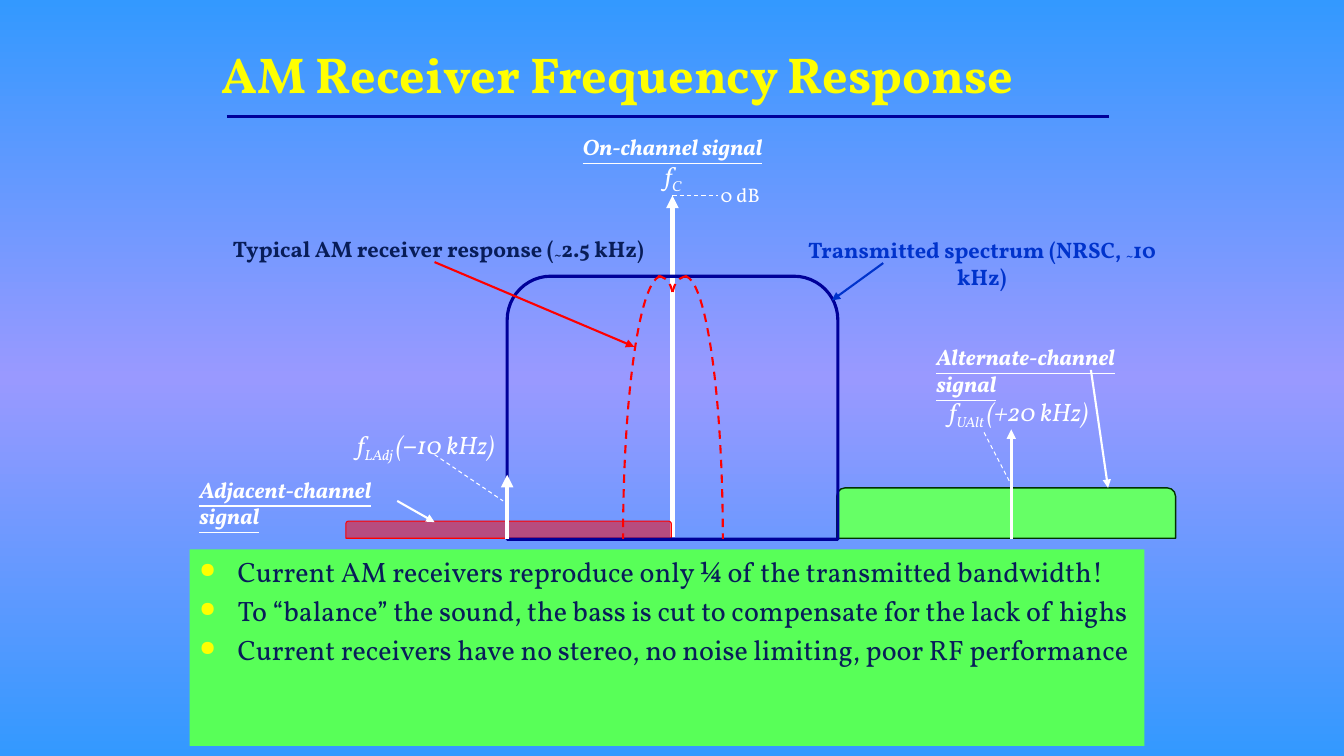
from copy import deepcopy
from dataclasses import dataclass

from lxml import etree
from pptx import Presentation
from pptx.dml.color import RGBColor
from pptx.enum.dml import MSO_LINE
from pptx.enum.shapes import MSO_CONNECTOR, MSO_SHAPE
from pptx.enum.text import MSO_ANCHOR, MSO_AUTO_SIZE, PP_ALIGN
from pptx.oxml.ns import qn
from pptx.util import Inches, Pt


@dataclass(frozen=True)
class Theme:
    """Colours, font and type sizes of the slide."""
    font: str = "Vollkorn"
    sky: str = "3399FF"
    lilac: str = "9999FF"
    yellow: str = "FFFF00"
    navy: str = "000099"
    ink: str = "081D58"
    blue: str = "0033CC"
    white: str = "FFFFFF"
    red: str = "FF0000"
    panel: str = "58FF58"
    green: str = "66FF66"
    forest: str = "003300"
    title: int = 36
    body: int = 20
    symbol: int = 18
    label: int = 16
    small: int = 14


THEME = Theme()


@dataclass(frozen=True)
class Box:
    """A rectangle in inches."""
    left: float
    top: float
    width: float
    height: float

    def region(self, left, top, width, height):
        """Return a box offset from this one's corner."""
        return Box(self.left + left, self.top + top, width, height)

    def point(self, left, top):
        """Return a point offset from this box's corner."""
        return self.left + left, self.top + top

    def lengths(self):
        """Return the four lengths for python-pptx."""
        return [Inches(n) for n in (self.left, self.top, self.width, self.height)]


@dataclass(frozen=True)
class Neighbour:
    """A neighbouring channel: its bar, and offsets from the bar's corner."""
    bar: Box
    fill: str
    edge: str
    edge_width: float
    opacity: int
    name: str
    name_at: tuple
    symbol: list
    symbol_at: tuple
    carrier: tuple
    carrier_width: float
    pointer: tuple
    leader: tuple


def rgb(colour):
    """Turn a hex code into a colour."""
    return RGBColor.from_string(colour)


def set_font(font, size, colour, bold=False, italic=False, underline=False):
    """Format a font in the theme's typeface."""
    font.name, font.size, font.color.rgb = THEME.font, Pt(size), rgb(colour)
    font.bold, font.italic, font.underline = bold, italic, underline


def add_shape(page, kind, box, fill=None, edge=None, width=1, dashed=False):
    """Add a preset shape without a shadow."""
    shape = page.shapes.add_shape(kind, *box.lengths())
    shape.shadow.inherit = False
    if fill:
        shape.fill.solid()
        shape.fill.fore_color.rgb = rgb(fill)
    else:
        shape.fill.background()
    if edge:
        shape.line.color.rgb, shape.line.width = rgb(edge), Pt(width)
        if dashed:
            shape.line.dash_style = MSO_LINE.DASH
    else:
        shape.line.fill.background()
    return shape


def add_line(page, start, end, colour, width, arrow=False, dashed=False):
    """Draw a straight line, with an arrowhead at its end if asked."""
    ends = [Inches(n) for n in (*start, *end)]
    line = page.shapes.add_connector(MSO_CONNECTOR.STRAIGHT, *ends)
    line.line.color.rgb, line.line.width = rgb(colour), Pt(width)
    if dashed:
        line.line.dash_style = MSO_LINE.DASH
    if arrow:
        etree.SubElement(line.line._get_or_add_ln(), qn("a:tailEnd"), type="triangle")
    etree.SubElement(line._element.spPr, qn("a:effectLst"))


def add_label(page, box, spans, size, colour, align=PP_ALIGN.LEFT, **style):
    """Add a text box from (text, baseline percent) spans."""
    frame = page.shapes.add_textbox(*box.lengths()).text_frame
    frame.word_wrap = True
    frame.auto_size = MSO_AUTO_SIZE.SHAPE_TO_FIT_TEXT
    para = frame.paragraphs[0]
    para.alignment = align
    for text, baseline in spans:
        span = para.add_run()
        span.text = text
        set_font(span.font, size, colour, **style)
        if text == "−":
            span.font.bold = True
        if baseline:
            span.font._element.set("baseline", str(baseline * 1000))


def add_symbol(page, box, spans):
    """Add a centred frequency symbol."""
    add_label(page, box, spans, THEME.symbol, THEME.white, PP_ALIGN.CENTER, italic=True)


def add_name(page, box, text, align=PP_ALIGN.LEFT):
    """Add an underlined signal name."""
    add_label(page, box, [(text, 0)], THEME.label, THEME.white, align,
              bold=True, italic=True, underline=True)


def paint_background(page):
    """Fill the page with a vertical three-stop gradient."""
    fill = page.background.fill
    fill.gradient()
    fill.gradient_angle = 90
    first = fill.gradient_stops[0]._gs
    first.addnext(deepcopy(first))
    stops = zip(fill.gradient_stops, (THEME.sky, THEME.lilac, THEME.sky), (0, 0.5, 1))
    for stop, colour, position in stops:
        stop.color.rgb, stop.position = rgb(colour), position


def draw_title(page, box):
    """Place the title and the rule below it."""
    title = page.shapes.title
    title.left, title.top, title.width, title.height = box.lengths()
    frame = title.text_frame
    frame.text = "AM Receiver Frequency Response"
    frame.vertical_anchor = MSO_ANCHOR.BOTTOM
    para = frame.paragraphs[0]
    para.alignment = PP_ALIGN.CENTER
    set_font(para.runs[0].font, THEME.title, THEME.yellow, bold=True)
    add_line(page, box.point(0.58, 0.86), box.point(9.33, 0.86), THEME.navy, 2.25)


def draw_points(page, box, points):
    """Place the bulleted panel."""
    frame = add_shape(page, MSO_SHAPE.RECTANGLE, box, THEME.panel).text_frame
    frame.word_wrap = True
    frame.vertical_anchor = MSO_ANCHOR.TOP
    frame.text = "\n".join(points)
    for index, para in enumerate(frame.paragraphs):
        para.alignment = PP_ALIGN.LEFT
        para.space_before = Pt(4 if index else 0)
        layout = para._p.get_or_add_pPr()
        layout.set("marL", str(Inches(0.38)))
        layout.set("indent", str(Inches(-0.38)))
        colour = etree.SubElement(layout, qn("a:buClr"))
        etree.SubElement(colour, qn("a:srgbClr"), val=THEME.yellow)
        etree.SubElement(layout, qn("a:buSzPct"), val="75000")
        etree.SubElement(layout, qn("a:buChar"), char="●")
        set_font(para.runs[0].font, THEME.body, THEME.ink)


def draw_carrier(page, box):
    """Draw the on-channel carrier with its level and labels."""
    add_line(page, box.point(0, box.height), box.point(0, 0), THEME.white, 3, arrow=True)
    add_line(page, box.point(0, 0), box.point(0.45, 0), THEME.white, 0.75, dashed=True)
    add_name(page, box.region(-1.26, -0.67, 2.52, 0.37), "On-channel signal", PP_ALIGN.CENTER)
    add_symbol(page, box.region(-0.33, -0.4, 0.67, 0.4), [("f", 0), ("C", -25)])
    add_label(page, box.region(0.38, -0.17, 0.88, 0.34), [("0 dB", 0)], THEME.small, THEME.white)


def draw_bar(page, channel):
    """Draw the spectrum bar of a neighbouring channel."""
    bar = add_shape(page, MSO_SHAPE.ROUND_2_SAME_RECTANGLE, channel.bar,
                    channel.fill, channel.edge, channel.edge_width)
    colour = bar._element.spPr.find(qn("a:solidFill"))[0]
    etree.SubElement(colour, qn("a:alpha"), val=str(channel.opacity * 1000))


def draw_neighbour(page, channel):
    """Draw the carrier, pointers and labels of a neighbouring channel."""
    box = channel.bar
    add_name(page, box.region(*channel.name_at, 2.5, 0.64), channel.name)
    add_symbol(page, box.region(*channel.symbol_at, 1.83, 0.4), channel.symbol)
    for ends, width, arrow in ((channel.carrier, channel.carrier_width, True),
                               (channel.pointer, 1.5, True), (channel.leader, 0.75, False)):
        start, end = (box.point(*place) for place in ends)
        add_line(page, start, end, THEME.white, width, arrow, dashed=not arrow)


def draw_transmitted(page, box):
    """Draw the transmitted spectrum and its label."""
    add_shape(page, MSO_SHAPE.ROUND_2_SAME_RECTANGLE, box, edge=THEME.navy, width=2.25)
    add_label(page, box.region(2.63, -0.45, 4.16, 0.64),
              [("Transmitted spectrum (NRSC, ", 0), ("~", -10), ("10 kHz)", 0)],
              THEME.label, THEME.blue, PP_ALIGN.CENTER, bold=True)
    add_line(page, box.point(3.73, -0.13), box.point(3.22, 0.24), THEME.blue, 1.5, arrow=True)


def draw_receiver(page, box):
    """Draw the dashed receiver response and its label."""
    for left, width, height, flipped in ((0.23, 0.76, box.height, False),
                                         (0, 0.76, box.height, True),
                                         (0.2, 0.29, 0.38, False), (0.49, 0.29, 0.38, True)):
        arc = add_shape(page, MSO_SHAPE.ARC, box.region(left, 0, width, height),
                        edge=THEME.red, width=1.5, dashed=True)
        if flipped:
            arc._element.spPr.xfrm.set("flipH", "1")
    add_label(page, box.region(-3.97, -0.46, 4.3, 0.64),
              [("Typical AM receiver response (", 0), ("~", -10), ("2.5 kHz)", 0)],
              THEME.label, THEME.ink, bold=True)
    add_line(page, box.point(-1.87, -0.14), box.point(0.11, 0.7), THEME.red, 1.5, arrow=True)


NEIGHBOURS = [
    Neighbour(Box(8.3, 4.84, 3.36, 0.5), THEME.green, THEME.forest, 1, 100,
              "Alternate-channel signal", (0.89, -1.48),
              [("f", 0), ("UAlt ", -25), ("(+20 kHz)", 0)], (0.89, -0.96),
              ((1.73, 0.51), (1.73, -0.58)), 2.25,
              ((2.52, -1.17), (2.69, 0)), ((1.46, -0.55), (1.72, -0.05))),
    Neighbour(Box(3.43, 5.17, 3.23, 0.17), THEME.red, THEME.red, 0.75, 50,
              "Adjacent-channel signal", (-1.55, -0.5),
              [("f", 0), ("LAdj ", -25), ("(", 0), ("−", 0), ("10 kHz)", 0)], (-0.12, -0.96),
              ((1.6, 0.18), (1.6, -0.46)), 3,
              ((0.51, -0.2), (0.88, 0.01)), ((0.88, -0.66), (1.56, -0.2))),
]
POINTS = [
    "Current AM receivers reproduce only ¼ of the transmitted bandwidth!",
    "To “balance” the sound, the bass is cut to compensate for the lack of highs",
    "Current receivers have no stereo, no noise limiting, poor RF performance",
]


def main():
    """Build and save the slide."""
    deck = Presentation()
    deck.slide_width, deck.slide_height = Inches(13.33), Inches(7.5)
    page = deck.slides.add_slide(deck.slide_layouts[5])
    paint_background(page)
    draw_title(page, Box(1.67, 0.3, 8.91, 0.78))
    draw_points(page, Box(1.88, 5.45, 9.47, 1.95), POINTS)
    draw_carrier(page, Box(6.67, 1.94, 0, 3.39))
    for channel in NEIGHBOURS:
        draw_bar(page, channel)
    draw_transmitted(page, Box(5.03, 2.74, 3.28, 2.61))
    for channel in NEIGHBOURS:
        draw_neighbour(page, channel)
    draw_receiver(page, Box(6.18, 2.74, 0.99, 5.21))
    deck.save("out.pptx")


if __name__ == "__main__":
    main()
